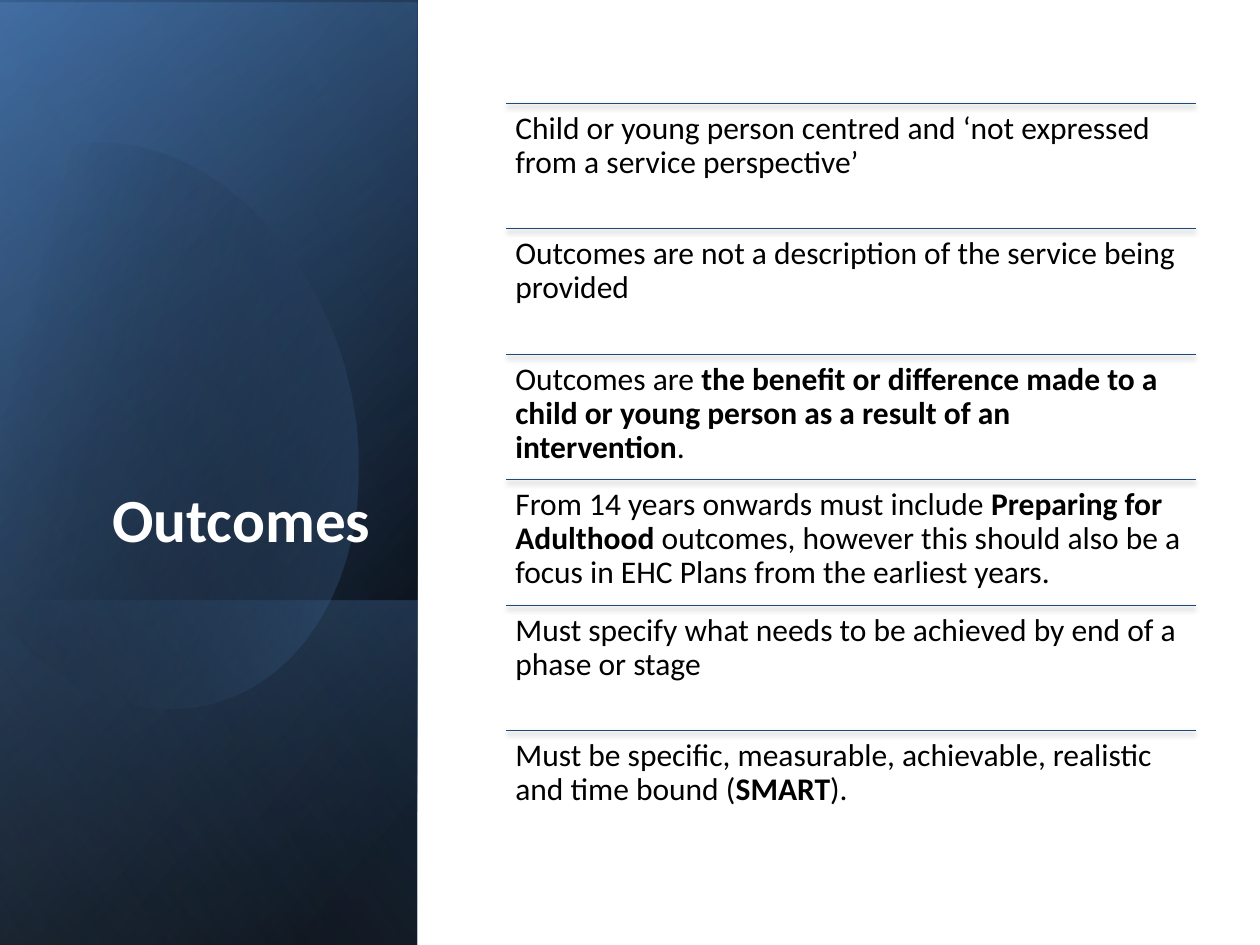
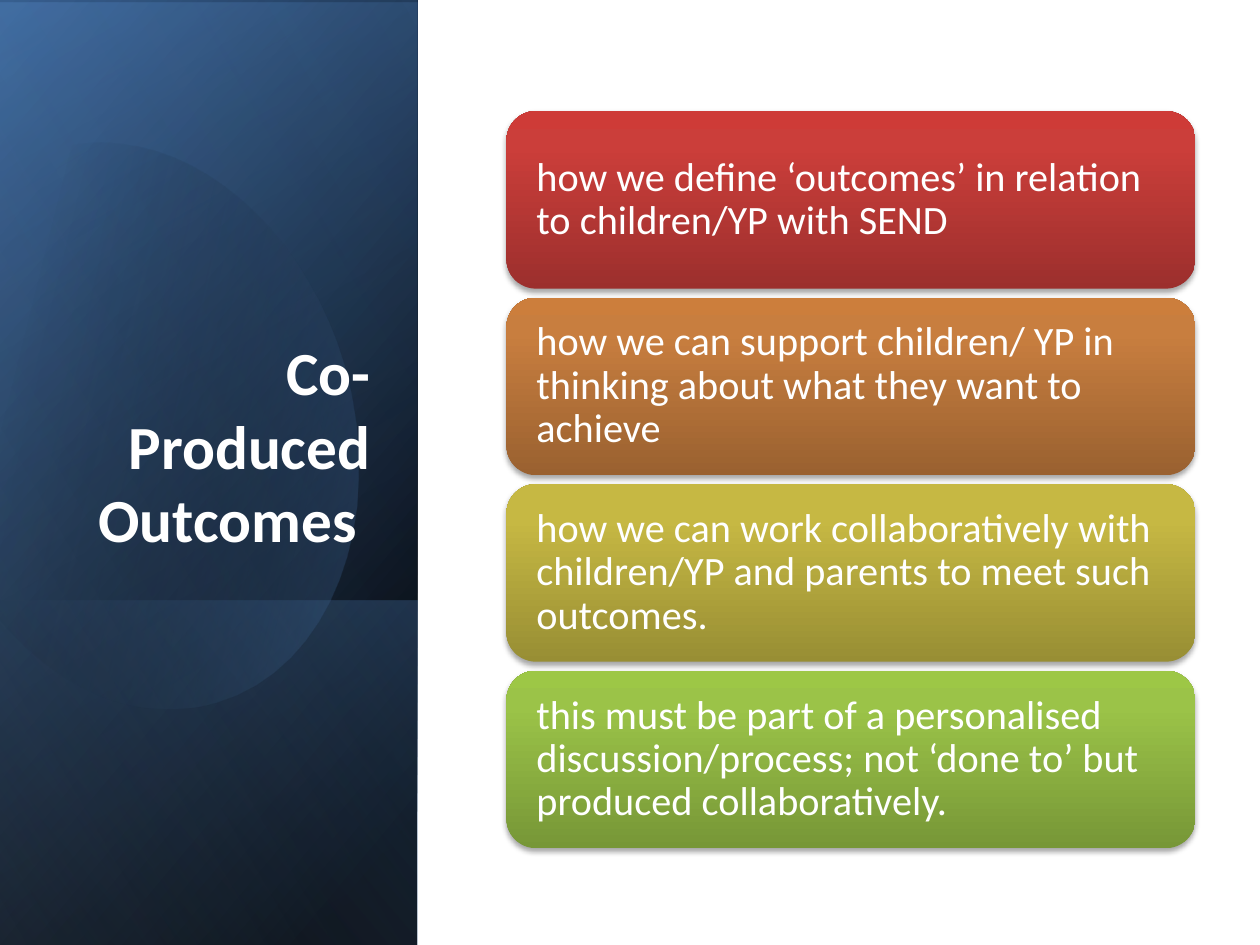
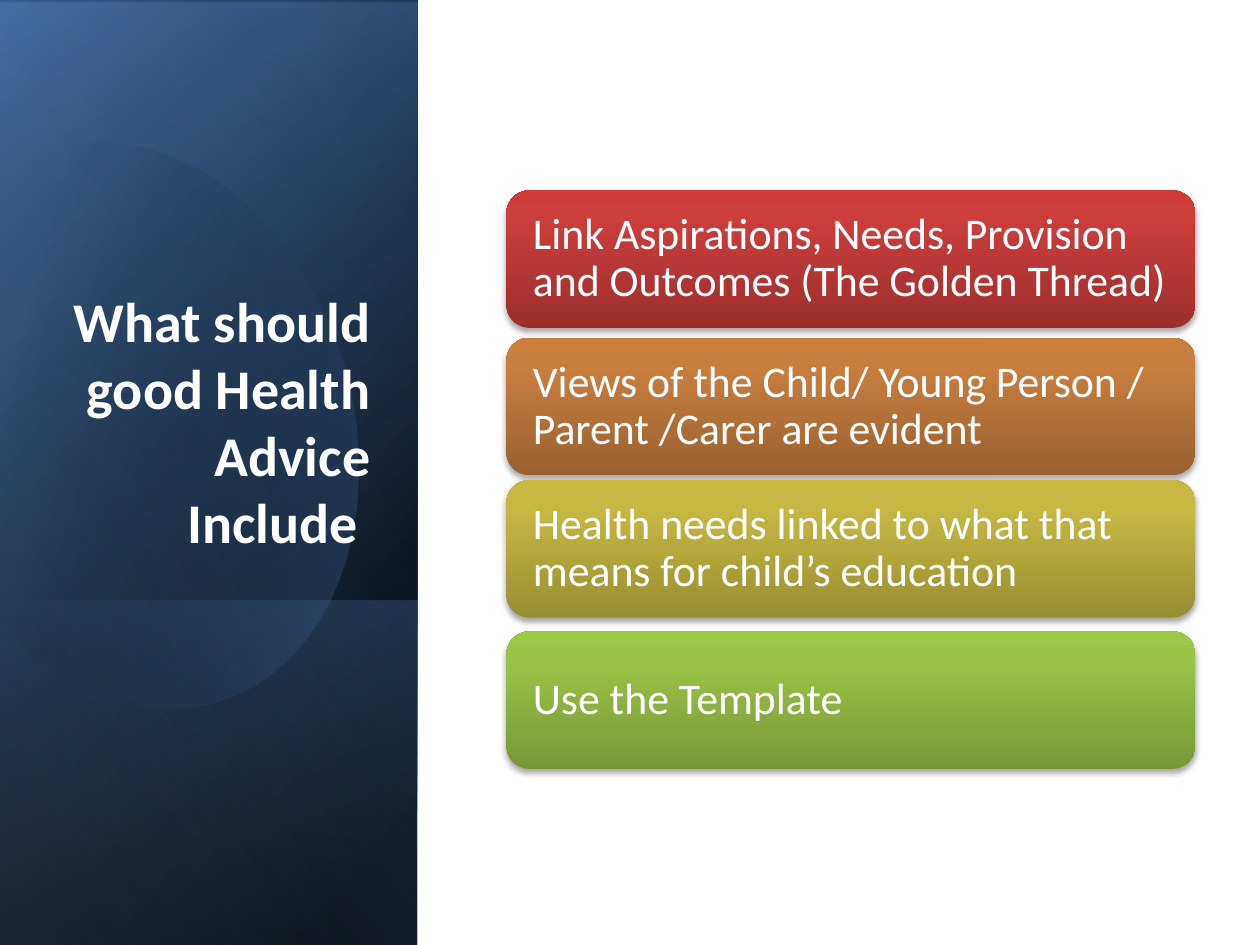
import math

from pptx import Presentation
from pptx.dml.color import RGBColor
from pptx.enum import shapes, text
from pptx.oxml import parse_xml
from pptx.oxml.ns import nsdecls, qn
from pptx.util import Cm, Pt

FONT = "Calibri"
WHITE = RGBColor(0xFF, 0xFF, 0xFF)
BLACK = RGBColor(0x00, 0x00, 0x00)
NAVY = RGBColor(0x37, 0x60, 0x92)
BLUE = RGBColor(0x4F, 0x81, 0xBD)
PALE = RGBColor(0x95, 0xB3, 0xD7)
RULE = RGBColor(0x1F, 0x49, 0x7D)

# Card colours from bottom to top
RED = [RGBColor(0x9C, 0x2F, 0x2D), RGBColor(0xCB, 0x3E, 0x3A), RGBColor(0xCE, 0x3B, 0x37)]
ORANGE = [RGBColor(0x9A, 0x61, 0x30), RGBColor(0xC8, 0x7E, 0x3F), RGBColor(0xCC, 0x7E, 0x3C)]
YELLOW = [RGBColor(0x98, 0x8E, 0x34), RGBColor(0xC6, 0xB8, 0x43), RGBColor(0xC9, 0xBB, 0x41)]
GREEN = [RGBColor(0x77, 0x97, 0x37), RGBColor(0x9B, 0xC3, 0x48), RGBColor(0x9D, 0xC7, 0x46)]
HUES = [RED, ORANGE, YELLOW, GREEN]

WIDE, HIGH = 25.4, 19.05
BAND = 8.41                # width of the title band
LEFT, SPAN = 10.21, 13.89  # column of rows and cards

# Band layers: top, height, gradient stops (place, colour, opacity), angle
BASE = [
    (0, HIGH, [(8, BLACK, 100), (100, NAVY, 100)], 50),
    (0.05, HIGH, [(0, BLACK, 0), (99, BLUE, 46)], 30),
    (12.1, 6.96, [(2, BLUE, 29), (100, BLACK, 30)], 130),
]
SHEEN = (0, HIGH, [(0, BLACK, 0), (99, PALE, 11)], 120)

# Oval on the band: start, then curves (three points) and lines (one point)
START = (2.44, 2.9)
PARTS = [
    [(4.34, 3.1), (6.2, 4.88), (6.93, 7.37)],
    [(7.8, 10.46), (6.65, 13.49), (4.34, 14.15)],
    [(2.9, 14.58), (1.35, 13.97), (0.18, 12.7)],
    [(-0.08, 12.4)],
    [(-0.64, 4.22)],
    [(-0.38, 3.91)],
    [(0.05, 3.48), (0.56, 3.18), (1.14, 3)],
    [(1.57, 2.87), (2.01, 2.84), START],
]
HUB, TILT = (3.02, 8.5), -16.1
GLOW = [(29, BLACK, 0), (100, BLUE, 43)]

# Each row is a list of runs: text, bold
ROWS = [
    [("Child or young person centred and ‘not expressed from a service perspective’", False)],
    [("Outcomes are not a description of the service being provided", False)],
    [("Outcomes are ", False),
     ("the benefit or difference made to a child or young person as a result of an intervention",
      True),
     (".", False)],
    [("From 14 years onwards must include ", False),
     ("Preparing for Adulthood ", True),
     ("outcomes, however this should also be a focus in EHC Plans from the earliest years.",
      False)],
    [("Must specify what needs to be achieved by end of a phase or stage", False)],
    [("Must be specific, measurable, achievable, realistic and time bound (", False),
     ("SMART", True),
     (").", False)],
]
ROW_TOP, ROW_STEP = 2.08, 2.53

DECKS = [
    dict(title="Co-Produced Outcomes ", head=35, size=23, high=3.58, pad=0.43,
         tops=[2.24 + 3.76 * i for i in range(4)],
         cards=["how we define ‘outcomes’ in relation to children/YP with SEND",
                "how we can support children/ YP in thinking about what they want to achieve",
                "how we can work collaboratively with children/YP and parents to meet such outcomes.",
                "this must be part of a personalised discussion/process; not ‘done to’ but produced "
                "collaboratively."]),
    dict(title="What should good Health Advice Include ", head=32, size=25, high=2.77, pad=0.4,
         tops=[3.84, 6.81, 9.68, 12.73],
         cards=["Link Aspirations, Needs, Provision and Outcomes (The Golden Thread)",
                "Views of the Child/ Young Person / Parent /Carer are evident",
                "Health needs linked to what that means for child’s education",
                "Use the Template"]),
]


def blend(shape, stops, angle):
    """Fill with a gradient whose stops carry opacity, without outline or shadow."""
    marks = "".join(
        f'<a:gs pos="{place * 1000}"><a:srgbClr val="{hue}">'
        f'<a:alpha val="{alpha * 1000}"/></a:srgbClr></a:gs>'
        for place, hue, alpha in stops)
    shape.fill.gradient()
    props = shape.element.spPr
    props.replace(props.find(qn("a:gradFill")), parse_xml(
        f'<a:gradFill {nsdecls("a")} rotWithShape="1"><a:gsLst>{marks}</a:gsLst>'
        f'<a:lin ang="{angle * 60000}" scaled="0"/></a:gradFill>'))
    shape.line.fill.background()
    shape.shadow.inherit = False


def shade(shape):
    """Give a soft shadow below; call after fill and line are set."""
    props = shape.element.spPr
    for old in props.findall(qn("a:effectLst")):
        props.remove(old)
    props.append(parse_xml(
        f'<a:effectLst {nsdecls("a")}><a:outerShdw blurRad="{Pt(3.1)}" dist="{Pt(1.8)}" '
        f'dir="5400000" rotWithShape="0"><a:srgbClr val="{BLACK}"><a:alpha val="35000"/>'
        f'</a:srgbClr></a:outerShdw></a:effectLst>'))


def write(frame, runs, size, color, pad, anchor, align=text.PP_ALIGN.LEFT, lead=0.9):
    frame.word_wrap = True
    frame.auto_size = text.MSO_AUTO_SIZE.NONE
    frame.vertical_anchor = anchor
    frame.margin_left = frame.margin_right = Cm(pad)
    frame.margin_top = frame.margin_bottom = Cm(min(pad, 0.18))
    para = frame.paragraphs[0]
    para.alignment, para.line_spacing = align, lead
    for words, bold in runs:
        run = para.add_run()
        run.text = words
        font = run.font
        font.name, font.size, font.bold = FONT, Pt(size), bold
        font.color.rgb = color


def layer(slide, top, high, stops, angle):
    """Add a mirrored rectangle, turned a quarter, that covers the band from top."""
    shape = slide.shapes.add_shape(
        shapes.MSO_SHAPE.RECTANGLE, Cm((BAND - high) / 2), Cm(top + (high - BAND) / 2),
        Cm(high), Cm(BAND))
    shape.rotation = 90
    shape.element.spPr.xfrm.set("flipH", "1")
    blend(shape, stops, angle)


def trace():
    """List the oval's points, with its tilt taken out."""
    points = [START]
    for part in PARTS:
        if len(part) == 1:
            points += part
            continue
        knots = [points[-1]] + part
        for i in range(1, 17):
            t = i / 16
            parts = [(1 - t) ** 3, 3 * t * (1 - t) ** 2, 3 * t * t * (1 - t), t ** 3]
            points.append(tuple(sum(w * k[axis] for w, k in zip(parts, knots))
                                for axis in (0, 1)))
    cos, sin = math.cos(math.radians(-TILT)), math.sin(math.radians(-TILT))
    flat = []
    for x, y in points:
        dx, dy = x - HUB[0], y - HUB[1]
        flat.append((Cm(HUB[0] + dx * cos - dy * sin), Cm(HUB[1] + dx * sin + dy * cos)))
    return flat


def oval(slide):
    points = trace()
    pen = slide.shapes.build_freeform(*points[0])
    pen.add_line_segments(points[1:], close=True)
    shape = pen.convert_to_shape()
    shape.rotation = TILT
    blend(shape, GLOW, 30)


def begin(deck, words, size):
    """Add a slide with the band and its title."""
    slide = deck.slides.add_slide(deck.slide_layouts[5])
    for item in BASE:
        layer(slide, *item)
    oval(slide)
    layer(slide, *SHEEN)
    title = slide.shapes.title
    title.left, title.top, title.width, title.height = Cm(1.22), Cm(4.67), Cm(6.5), Cm(6.65)
    write(title.text_frame, [(words, True)], size, WHITE, 0.25,
          text.MSO_ANCHOR.BOTTOM, text.PP_ALIGN.RIGHT, 1.0)
    title.text_frame.margin_bottom = Cm(0.13)
    slide.shapes._spTree.append(title.element)  # bring in front of the band
    return slide


def list_rows(slide):
    for i, runs in enumerate(ROWS):
        top = Cm(ROW_TOP + i * ROW_STEP)
        rule = slide.shapes.add_connector(
            shapes.MSO_CONNECTOR.STRAIGHT, Cm(LEFT), top, Cm(LEFT + SPAN), top)
        rule.line.color.rgb, rule.line.width = RULE, Pt(0.75)
        shade(rule)
        box = slide.shapes.add_textbox(Cm(LEFT), top, Cm(SPAN), Cm(ROW_STEP))
        write(box.text_frame, runs, 18, BLACK, 0.18, text.MSO_ANCHOR.TOP)


def stack(slide, plan):
    for words, top, hues in zip(plan["cards"], plan["tops"], HUES):
        card = slide.shapes.add_shape(
            shapes.MSO_SHAPE.ROUNDED_RECTANGLE, Cm(LEFT), Cm(top), Cm(SPAN), Cm(plan["high"]))
        blend(card, [(place, hue, 100) for place, hue in zip((0, 80, 100), hues)], 270)
        shade(card)
        write(card.text_frame, [(words, False)], plan["size"], WHITE, plan["pad"],
              text.MSO_ANCHOR.MIDDLE)


def main():
    deck = Presentation()
    deck.slide_width, deck.slide_height = Cm(WIDE), Cm(HIGH)
    list_rows(begin(deck, "Outcomes", 35))
    for plan in DECKS:
        stack(begin(deck, plan["title"], plan["head"]), plan)
    deck.save("out.pptx")


if __name__ == "__main__":
    main()
